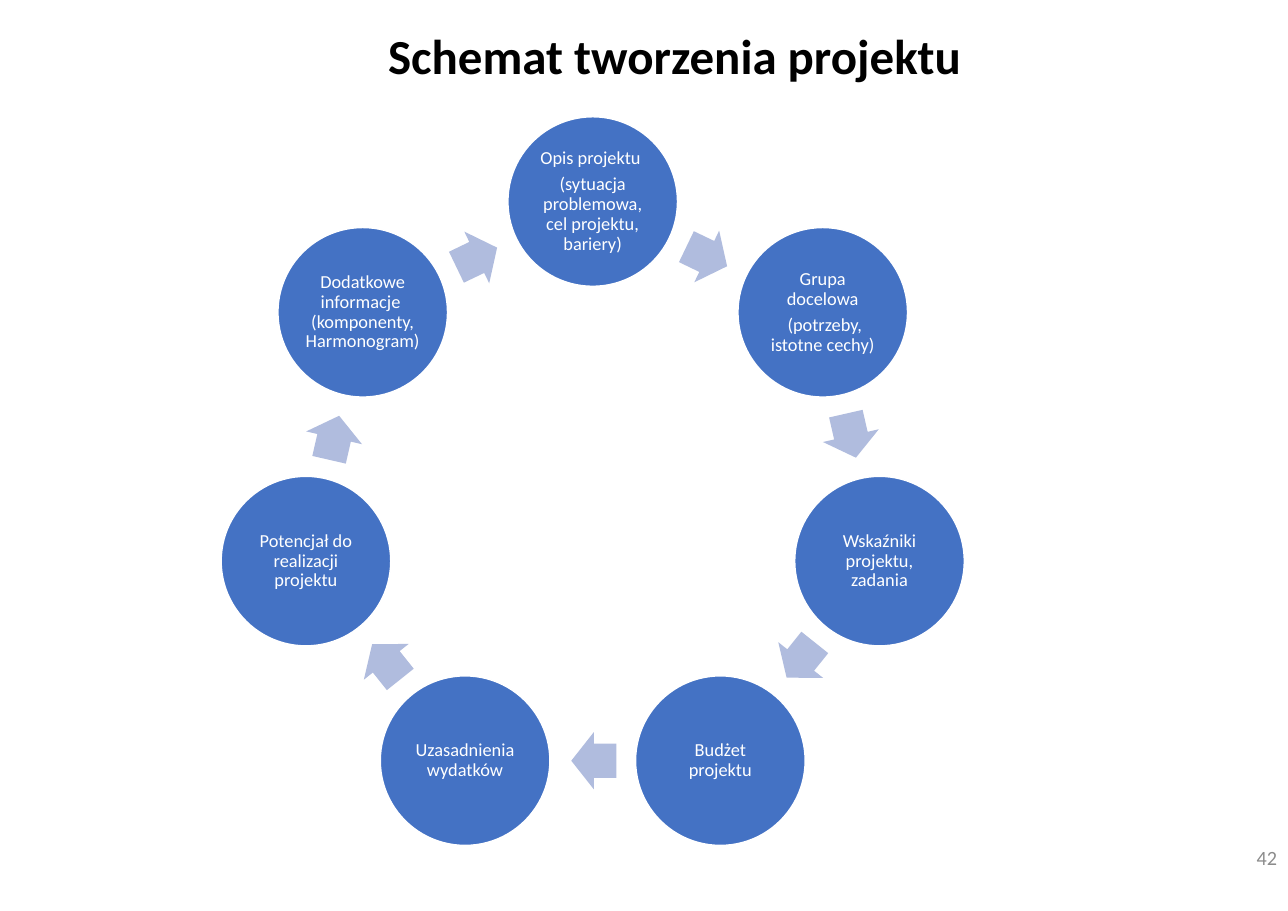
from math import cos, pi, sin

from lxml.etree import SubElement
from pptx import Presentation
from pptx.dml.color import RGBColor
from pptx.enum.shapes import MSO_SHAPE
from pptx.enum.text import MSO_ANCHOR, PP_ALIGN
from pptx.oxml.ns import qn
from pptx.util import Inches, Pt

COLORS = {
    "circle": "4472C4",
    "arrow": "B0BCDE",
    "white": "FFFFFF",
    "title": "000000",
    "number": "8C8C8C",
}
STEPS = [
    ["Opis projektu ", "(sytuacja problemowa, cel projektu, bariery)"],
    ["Grupa docelowa", " (potrzeby, istotne cechy)"],
    ["Wskaźniki projektu, zadania"],
    ["Budżet projektu"],
    ["Uzasadnienia wydatków"],
    ["Potencjał do realizacji projektu"],
    ["Dodatkowe informacje \v(komponenty, Harmonogram)"],
]
CENTER_X, CENTER_Y, RADIUS = 5.38, 4.5, 2.67
DIAMETER = 1.54
ARROW_WIDTH, ARROW_HEIGHT = 0.41, 0.52
ARROW_SETBACK = 0.01


def color(name):
    return RGBColor.from_string(COLORS[name])


def write(frame, paragraphs, size, ink, bold=False, align=PP_ALIGN.CENTER,
          anchor=MSO_ANCHOR.MIDDLE, spacing=1.0, after=0, inset=None):
    frame.word_wrap = True
    frame.vertical_anchor = anchor
    if inset is not None:
        frame.margin_left = frame.margin_right = Inches(inset)
        frame.margin_top = frame.margin_bottom = Inches(inset)
    for index, text in enumerate(paragraphs):
        para = frame.add_paragraph() if index else frame.paragraphs[0]
        para.text = text
        para.alignment = align
        para.line_spacing = spacing
        para.space_after = Pt(after)
        for line_break in para._p.findall(qn("a:br")):
            SubElement(line_break, qn("a:rPr"), sz=str(int(size * 100)))
        for span in para.runs:
            span.font.name = "Calibri"
            span.font.size = Pt(size)
            span.font.bold = bold
            span.font.color.rgb = color(ink)


class Page:
    def __init__(self, deck):
        self.shapes = deck.slides.add_slide(deck.slide_layouts[6]).shapes

    def shape(self, kind, x, y, width, height, fill):
        shape = self.shapes.add_shape(
            kind, Inches(x - width / 2), Inches(y - height / 2),
            Inches(width), Inches(height))
        shape.shadow.inherit = False
        shape.fill.solid()
        shape.fill.fore_color.rgb = color(fill)
        return shape

    def circle(self, x, y, paragraphs):
        circle = self.shape(MSO_SHAPE.OVAL, x, y, DIAMETER, DIAMETER, "circle")
        circle.line.color.rgb = color("white")
        circle.line.width = Pt(1)
        write(circle.text_frame, paragraphs, 12, "white",
              spacing=0.9, after=4.2, inset=0.02)

    def arrow(self, x, y, rotation):
        arrow = self.shape(MSO_SHAPE.RIGHT_ARROW, x, y,
                           ARROW_WIDTH, ARROW_HEIGHT, "arrow")
        arrow.line.fill.background()
        arrow.adjustments[0] = 0.6
        arrow.adjustments[1] = 0.5
        arrow.rotation = rotation

    def text(self, left, top, width, height, text, size, ink, **style):
        box = self.shapes.add_textbox(
            Inches(left), Inches(top), Inches(width), Inches(height))
        write(box.text_frame, [text], size, ink, **style)


def main():
    deck = Presentation()
    deck.slide_width, deck.slide_height = Inches(11.69), Inches(8.27)
    page = Page(deck)
    turn = 2 * pi / len(STEPS)
    arrow_radius = RADIUS * cos(turn / 2)
    for index, paragraphs in enumerate(STEPS):
        angle = index * turn
        page.circle(CENTER_X + RADIUS * sin(angle),
                    CENTER_Y - RADIUS * cos(angle), paragraphs)
        middle = angle + turn / 2
        page.arrow(
            CENTER_X + arrow_radius * sin(middle) - ARROW_SETBACK * cos(middle),
            CENTER_Y - arrow_radius * cos(middle) - ARROW_SETBACK * sin(middle),
            round(middle * 180 / pi, 1))
    page.text(10.51, 7.68, 1.18, 0.2, "42", 13.2, "number", align=PP_ALIGN.RIGHT)
    page.text(2.07, 0.18, 8.11, 0.64, "Schemat tworzenia projektu", 32, "title",
              bold=True, anchor=MSO_ANCHOR.TOP)
    deck.save("out.pptx")


if __name__ == "__main__":
    main()
